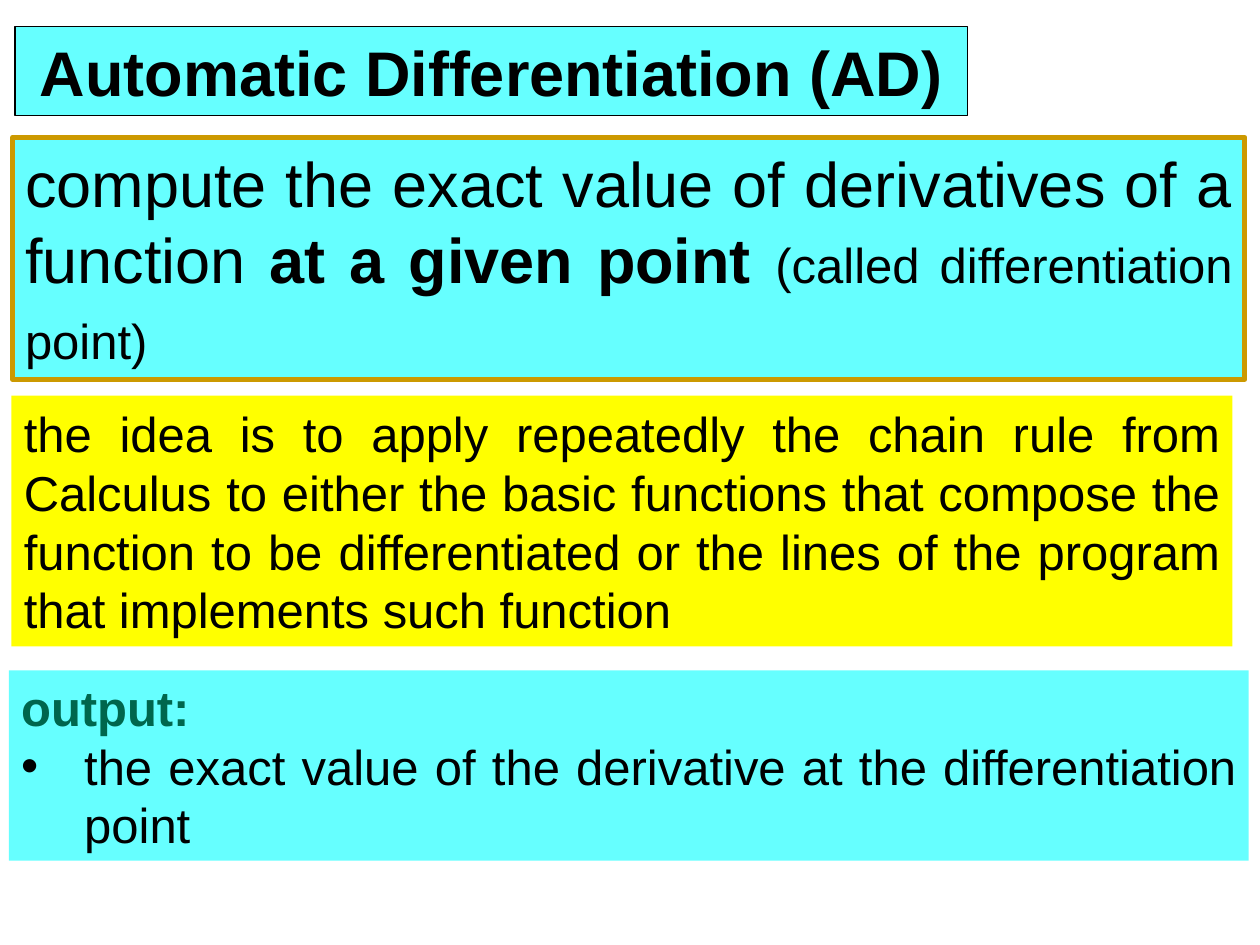
from dataclasses import dataclass

from lxml import etree
from pptx import Presentation
from pptx.dml.color import RGBColor
from pptx.enum.shapes import MSO_SHAPE
from pptx.enum.text import MSO_ANCHOR, PP_ALIGN
from pptx.oxml.ns import qn
from pptx.util import Inches, Pt

RECTANGLE = MSO_SHAPE.RECTANGLE
MIDDLE = MSO_ANCHOR.MIDDLE
CENTER = PP_ALIGN.CENTER
JUSTIFY = PP_ALIGN.JUSTIFY

FONT = "Arial"
BLACK = "000000"
CYAN = "66FFFF"
YELLOW = "FFFF00"
GOLD = "CC9900"
GREEN = "00664D"
LARGE = 36
MEDIUM = 28


@dataclass
class Span:
    text: str
    size: int = MEDIUM
    bold: bool = False
    color: str = BLACK


@dataclass
class Para:
    spans: list[Span]
    align: PP_ALIGN = JUSTIFY
    bullet: str = ""


@dataclass
class Panel:
    left: float
    top: float
    width: float
    height: float
    fill: str
    paras: list[Para]
    line: str = ""
    line_width: float = 0


PANELS = [
    Panel(0.1, 1.09, 9.78, 1.92, CYAN, [
        Para([
            Span("compute the exact value of derivatives of a function ", LARGE),
            Span("at a given point ", LARGE, bold=True),
            Span("(called differentiation point)"),
            Span(" ", LARGE),
        ]),
    ], GOLD, 3),
    Panel(0.12, 0.21, 7.56, 0.71, CYAN, [
        Para([Span("Automatic Differentiation (AD)", LARGE, bold=True)], CENTER),
    ], BLACK, 0.75),
    Panel(0.09, 3.14, 9.69, 1.99, YELLOW, [
        Para([Span(
            "the idea is to apply repeatedly the chain rule from Calculus to "
            "either the basic functions that compose the function to be "
            "differentiated or the lines of the program that implements such "
            "function"
        )]),
    ]),
    Panel(0.07, 5.32, 9.84, 1.51, CYAN, [
        Para([Span("output: ", bold=True, color=GREEN)]),
        Para(
            [Span("the exact value of the derivative at the differentiation point")],
            bullet="•",
        ),
    ]),
]


def rgb(color: str) -> RGBColor:
    return RGBColor.from_string(color)


def add_bullet(paragraph, character: str) -> None:
    properties = paragraph._p.get_or_add_pPr()
    properties.set("marL", str(Inches(0.5)))
    properties.set("indent", str(Inches(-0.5)))
    font = etree.SubElement(properties, qn("a:buFont"))
    font.set("typeface", FONT)
    bullet = etree.SubElement(properties, qn("a:buChar"))
    bullet.set("char", character)


def write_para(paragraph, para: Para) -> None:
    paragraph.alignment = para.align
    if para.bullet:
        add_bullet(paragraph, para.bullet)
    for span in para.spans:
        run = paragraph.add_run()
        run.text = span.text
        run.font.name = FONT
        run.font.size = Pt(span.size)
        run.font.bold = span.bold
        run.font.color.rgb = rgb(span.color)


def draw_panel(slide, panel: Panel) -> None:
    box = slide.shapes.add_shape(
        RECTANGLE,
        Inches(panel.left),
        Inches(panel.top),
        Inches(panel.width),
        Inches(panel.height),
    )
    box.shadow.inherit = False
    box.fill.solid()
    box.fill.fore_color.rgb = rgb(panel.fill)
    if panel.line:
        box.line.color.rgb = rgb(panel.line)
        box.line.width = Pt(panel.line_width)
    else:
        box.line.fill.background()
    frame = box.text_frame
    frame.word_wrap = True
    frame.vertical_anchor = MIDDLE
    for index, para in enumerate(panel.paras):
        paragraph = frame.add_paragraph() if index else frame.paragraphs[0]
        write_para(paragraph, para)


def main() -> None:
    deck = Presentation()
    deck.slide_width = Inches(10)
    deck.slide_height = Inches(7.5)
    slide = deck.slides.add_slide(deck.slide_layouts[6])
    for panel in PANELS:
        draw_panel(slide, panel)
    deck.save("out.pptx")


if __name__ == "__main__":
    main()
